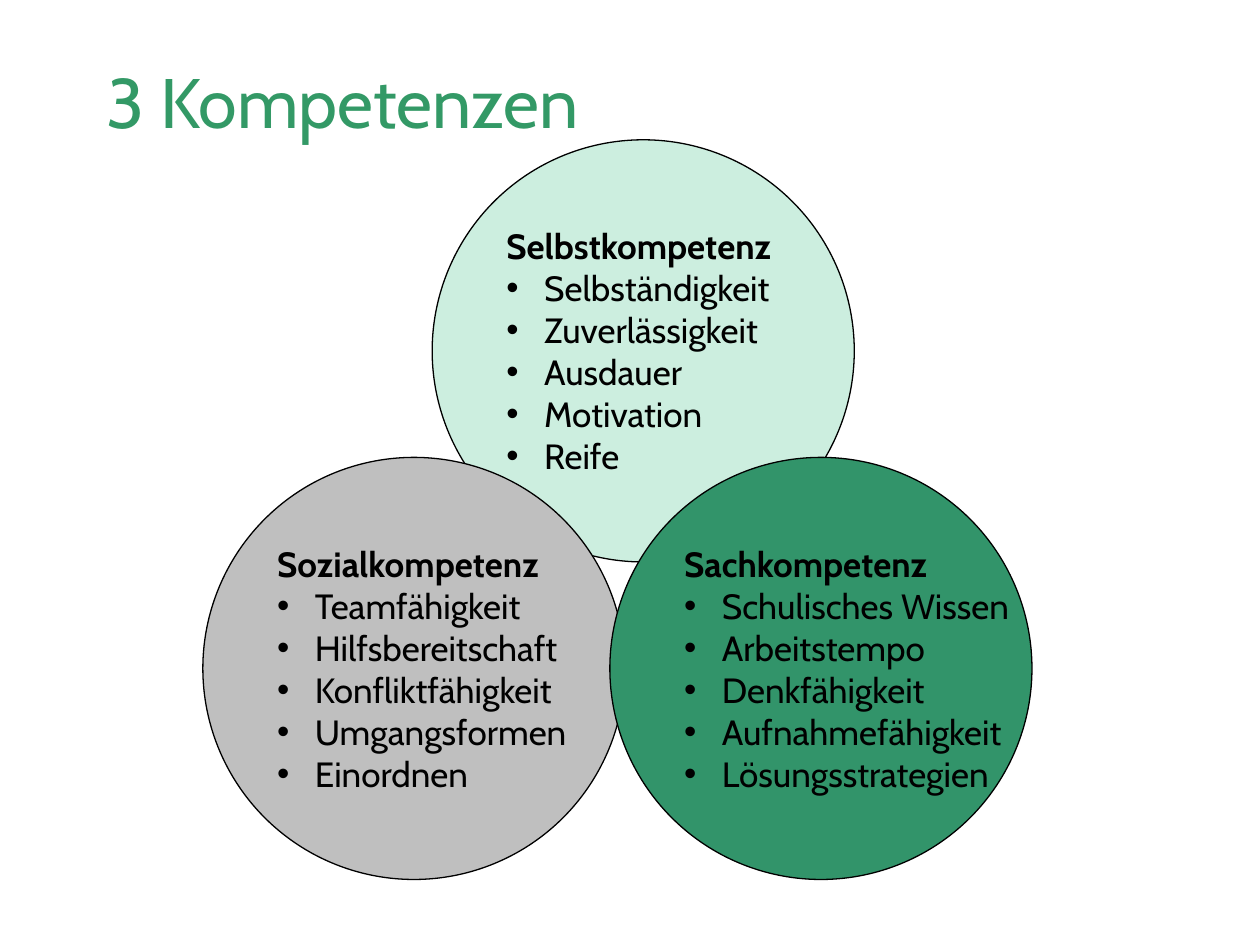
from pptx import Presentation
from pptx.dml.color import RGBColor
from pptx.enum.shapes import MSO_SHAPE as Shape
from pptx.enum.text import MSO_ANCHOR as Anchor, PP_ALIGN as Align
from pptx.oxml.ns import qn
from pptx.util import Inches, Pt
from lxml.etree import SubElement

FONT = "Cabin"
DIAMETER = 3.35
BULLET_INDENT = Inches(0.3)

COMPETENCES = [
    (3.43, 1.11, "CCEEDF", "Selbstkompetenz",
     ["Selbständigkeit", "Zuverlässigkeit", "Ausdauer", "Motivation", "Reife"]),
    (1.61, 3.63, "BFBFBF", "Sozialkompetenz",
     ["Teamfähigkeit", "Hilfsbereitschaft", "Konfliktfähigkeit", "Umgangsformen", "Einordnen"]),
    (4.84, 3.63, "32946A", "Sachkompetenz",
     ["Schulisches Wissen", "Arbeitstempo", "Denkfähigkeit", "Aufnahmefähigkeit",
      "Lösungsstrategien"]),
]


def color(hex_value):
    return RGBColor.from_string(hex_value)


def style(para, size, hex_value, bold=False):
    para.alignment = Align.LEFT
    para.font.name = FONT
    para.font.size = Pt(size)
    para.font.bold = bold
    para.font.color.rgb = color(hex_value)


def add_bullet(para):
    properties = para._p.get_or_add_pPr()
    properties.set("marL", str(BULLET_INDENT))
    properties.set("indent", str(-BULLET_INDENT))
    SubElement(properties, qn("a:buFont"), typeface="Arial")
    SubElement(properties, qn("a:buChar"), char="•")


def add_title(page, left, top, width, height, text):
    box = page.shapes.add_textbox(Inches(left), Inches(top), Inches(width), Inches(height))
    frame = box.text_frame
    frame.word_wrap = True
    frame.vertical_anchor = Anchor.MIDDLE
    para = frame.paragraphs[0]
    para.text = text
    style(para, 40, "339966")


def add_competence(page, left, top, fill, heading, skills):
    circle = page.shapes.add_shape(
        Shape.OVAL, Inches(left), Inches(top), Inches(DIAMETER), Inches(DIAMETER))
    circle.shadow.inherit = False
    circle.fill.solid()
    circle.fill.fore_color.rgb = color(fill)
    circle.line.color.rgb = color("000000")
    circle.line.width = Pt(0.75)

    frame = circle.text_frame
    frame.word_wrap = False
    frame.vertical_anchor = Anchor.MIDDLE
    para = frame.paragraphs[0]
    para.text = heading
    style(para, 20, "000000", bold=True)
    for skill in skills:
        para = frame.add_paragraph()
        para.text = skill
        add_bullet(para)
        style(para, 20, "000000")


def main():
    deck = Presentation()
    deck.slide_width, deck.slide_height = Inches(10), Inches(7.5)
    page = deck.slides.add_slide(deck.slide_layouts[6])
    add_title(page, 0.75, 0.36, 6.14, 0.87, "3 Kompetenzen")
    for competence in COMPETENCES:
        add_competence(page, *competence)
    deck.save("out.pptx")


if __name__ == "__main__":
    main()
